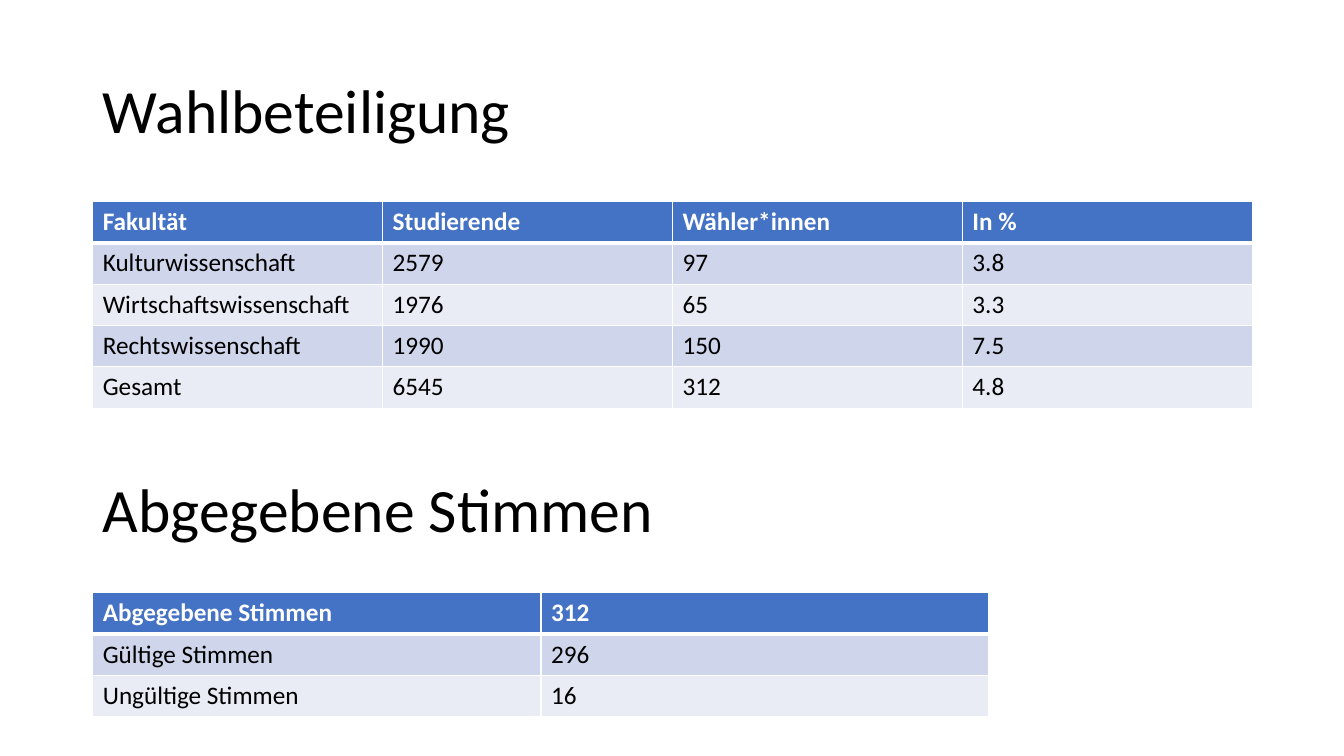
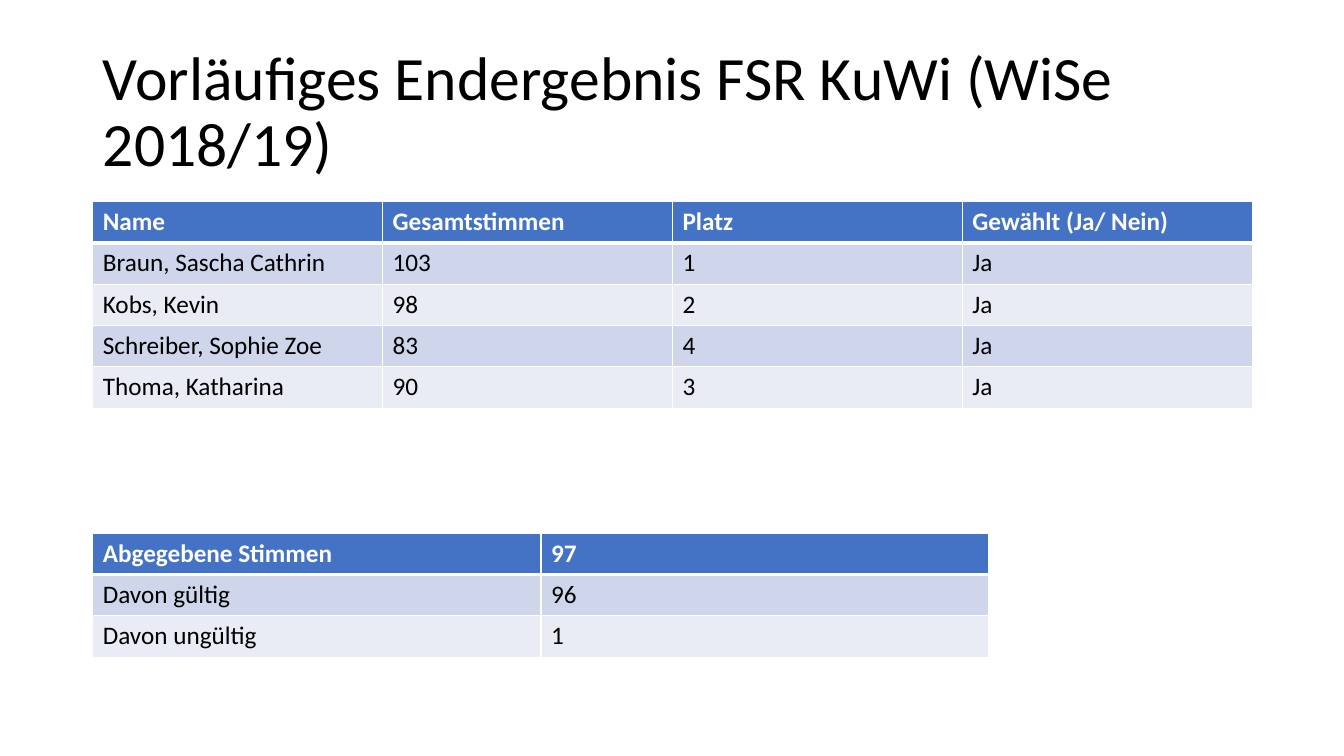
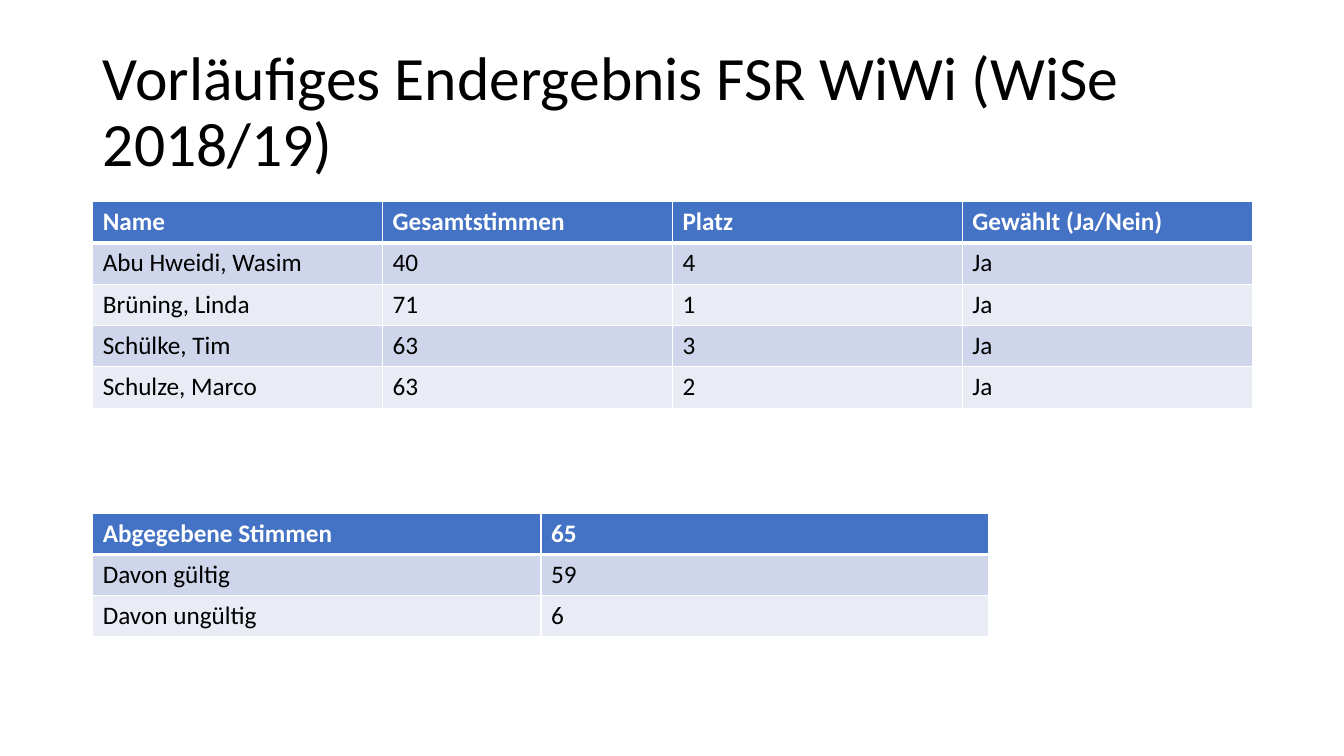
from lxml import etree
from pptx import Presentation
from pptx.dml.color import RGBColor
from pptx.enum.text import MSO_ANCHOR, MSO_AUTO_SIZE, PP_ALIGN
from pptx.oxml.ns import qn
from pptx.util import Inches, Pt

LEFT = PP_ALIGN.LEFT
MIDDLE = MSO_ANCHOR.MIDDLE
FIT_NONE = MSO_AUTO_SIZE.NONE
FIT_SHAPE = MSO_AUTO_SIZE.SHAPE_TO_FIT_TEXT

BLACK = RGBColor(0x00, 0x00, 0x00)
WHITE = RGBColor(0xFF, 0xFF, 0xFF)
HEADER_BLUE = RGBColor(0x44, 0x72, 0xC4)
BANDS = (RGBColor(0xCF, 0xD5, 0xEA), RGBColor(0xE9, 0xEB, 0xF5))

TITLE_ONLY = 5
MARGIN = 0.92
FULL_WIDTH = 11.5
SUMMARY_WIDTH = 8.89
RESULTS_TOP = 2
ROW_HEIGHT = 0.41

HEADING_FONT = {"name": "Calibri", "size": Pt(44), "bold": False}
HEADER_FONT = {"name": "Calibri", "size": Pt(18), "bold": True}
BODY_FONT = {**HEADER_FONT, "bold": False}


def apply_format(target, values):
    for attribute, value in values.items():
        setattr(target, attribute, value)


class ElectionDeck:
    """Holds the shared style and the slide being filled."""

    def __init__(self):
        self.presentation = Presentation()
        self.presentation.slide_width = Inches(13.33)
        self.presentation.slide_height = Inches(7.5)
        self.slide = None

    def new_slide(self, heading):
        layout = self.presentation.slide_layouts[TITLE_ONLY]
        self.slide = self.presentation.slides.add_slide(layout)
        title = self.slide.shapes.title
        apply_format(title, {
            "left": Inches(MARGIN), "top": Inches(0.4),
            "width": Inches(FULL_WIDTH), "height": Inches(1.45),
        })
        apply_format(title.text_frame, {
            "text": heading, "word_wrap": True,
            "auto_size": FIT_NONE, "vertical_anchor": MIDDLE,
        })
        paragraph = title.text_frame.paragraphs[0]
        apply_format(paragraph, {"alignment": LEFT, "line_spacing": 0.9})
        self.style_text(paragraph, HEADING_FONT, BLACK)

    def subheading(self, text, top):
        box = self.slide.shapes.add_textbox(
            Inches(MARGIN), Inches(top), Inches(6.32), Inches(0.84))
        apply_format(box.text_frame, {
            "text": text, "word_wrap": True, "auto_size": FIT_SHAPE,
        })
        self.style_text(box.text_frame.paragraphs[0], HEADING_FONT, BLACK)

    def table(self, rows, top, width):
        column_count = len(rows[0])
        grid = self.slide.shapes.add_table(
            len(rows), column_count, Inches(MARGIN), Inches(top),
            Inches(width), Inches(ROW_HEIGHT * len(rows))).table
        for column in grid.columns:
            column.width = Inches(width / column_count)
        for row_index, row in enumerate(rows):
            grid.rows[row_index].height = Inches(ROW_HEIGHT)
            for column_index, text in enumerate(row):
                self.fill_cell(grid.cell(row_index, column_index), text, row_index)

    def fill_cell(self, cell, text, row_index):
        is_header = row_index == 0
        # A thick rule separates the header from the first body row
        self.cell_borders(cell, {
            "L": 1, "R": 1,
            "T": 3 if row_index == 1 else 1,
            "B": 3 if is_header else 1,
        })
        cell.fill.solid()
        cell.fill.fore_color.rgb = (
            HEADER_BLUE if is_header else BANDS[(row_index - 1) % len(BANDS)])
        cell.text = text
        self.style_text(cell.text_frame.paragraphs[0],
                        HEADER_FONT if is_header else BODY_FONT,
                        WHITE if is_header else BLACK)

    @staticmethod
    def cell_borders(cell, widths):
        properties = cell._tc.get_or_add_tcPr()
        for side, points in widths.items():
            line = etree.SubElement(properties, qn(f"a:ln{side}"), w=str(Pt(points)))
            solid = etree.SubElement(line, qn("a:solidFill"))
            etree.SubElement(solid, qn("a:srgbClr"), val=str(WHITE))

    @staticmethod
    def style_text(paragraph, font_values, color):
        for run in paragraph.runs:
            apply_format(run.font, font_values)
            run.font.color.rgb = color


def main():
    deck = ElectionDeck()

    # Turnout and votes cast
    deck.new_slide("Wahlbeteiligung")
    deck.table([
        ("Fakultät", "Studierende", "Wähler*innen", "In %"),
        ("Kulturwissenschaft", "2579", "97", "3.8"),
        ("Wirtschaftswissenschaft", "1976", "65", "3.3"),
        ("Rechtswissenschaft", "1990", "150", "7.5"),
        ("Gesamt", "6545", "312", "4.8"),
    ], RESULTS_TOP, FULL_WIDTH)
    deck.table([
        ("Abgegebene Stimmen", "312"),
        ("Gültige Stimmen", "296"),
        ("Ungültige Stimmen", "16"),
    ], 5.88, SUMMARY_WIDTH)
    deck.subheading("Abgegebene Stimmen", 4.62)

    # Results per faculty: council, last header, candidates, votes, summary top
    councils = [
        ("KuWi", "Gewählt (Ja/ Nein)", [
            ("Braun, Sascha Cathrin", "103", "1", "Ja"),
            ("Kobs, Kevin", "98", "2", "Ja"),
            ("Schreiber, Sophie Zoe", "83", "4", "Ja"),
            ("Thoma, Katharina", "90", "3", "Ja"),
        ], ("97", "96", "1"), 5.29),
        ("WiWi", "Gewählt (Ja/Nein)", [
            ("Abu Hweidi, Wasim", "40", "4", "Ja"),
            ("Brüning, Linda", "71", "1", "Ja"),
            ("Schülke, Tim", "63", "3", "Ja"),
            ("Schulze, Marco", "63", "2", "Ja"),
        ], ("65", "59", "6"), 5.09),
    ]
    vote_labels = ("Abgegebene Stimmen", "Davon gültig", "Davon ungültig")
    for council, elected_header, candidates, votes, summary_top in councils:
        deck.new_slide(f"Vorläufiges Endergebnis FSR {council} (WiSe 2018/19)")
        header = ("Name", "Gesamtstimmen", "Platz", elected_header)
        deck.table([header, *candidates], RESULTS_TOP, FULL_WIDTH)
        deck.table(list(zip(vote_labels, votes)), summary_top, SUMMARY_WIDTH)

    deck.presentation.save("out.pptx")


if __name__ == "__main__":
    main()
